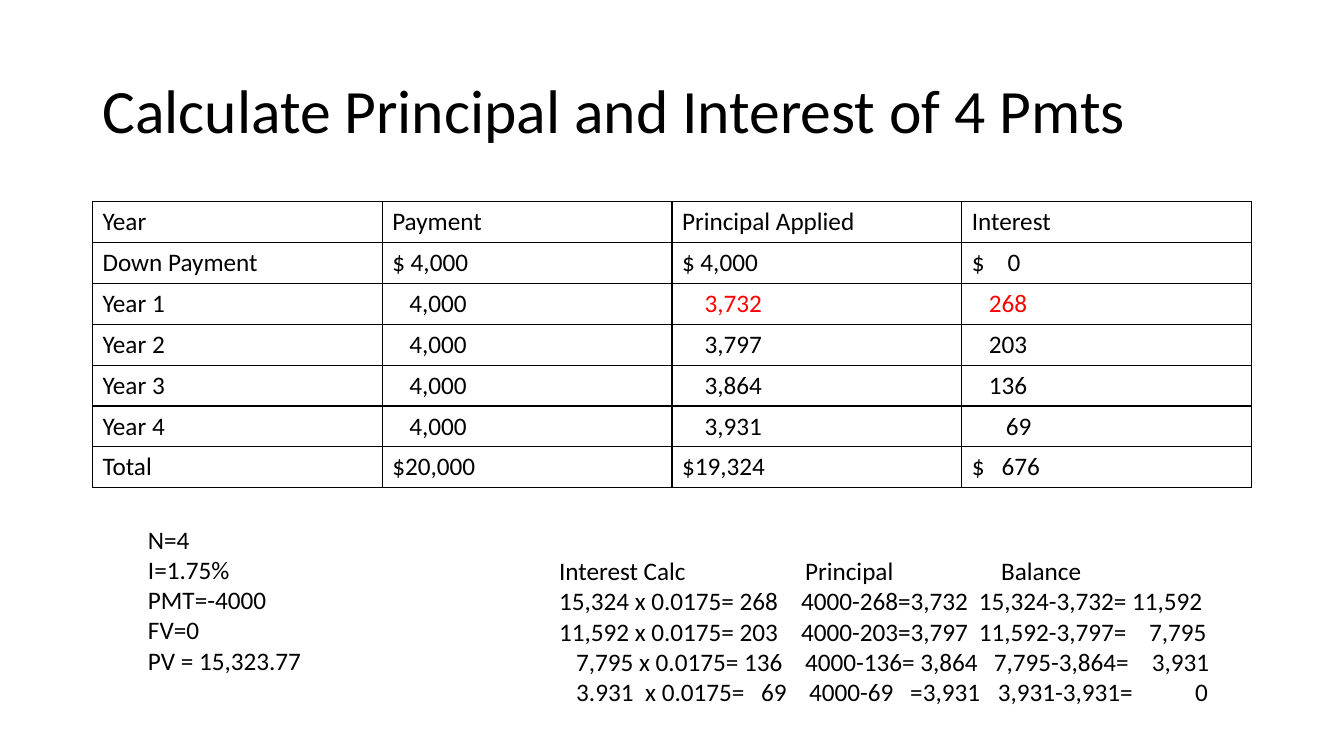
from lxml import etree
from pptx import Presentation
from pptx.dml.color import RGBColor
from pptx.enum.text import MSO_ANCHOR
from pptx.oxml.ns import qn
from pptx.util import Cm, Pt

MIDDLE, TOP = MSO_ANCHOR.MIDDLE, MSO_ANCHOR.TOP
BLACK = RGBColor(0, 0, 0)
RED = RGBColor(255, 0, 0)
FONT = "Calibri"
BODY_SIZE = 18

# Content: a line is a string, or a list of pieces (tab stop in cm or None, text)
TITLE = "Calculate Principal and Interest of 4 Pmts"
HEADER = ["Year", "Payment", "Principal Applied", "Interest"]
DOWN_PAYMENT = ["Down Payment", "$ 4,000", "$ 4,000", [(None, "$"), (0.9, "0")]]
YEARS = [  # year, payment, principal, interest, interest tab stop, number colour
    ("Year 1", "4,000", "3,732", "268", 0.43, RED),
    ("Year 2", "4,000", "3,797", "203", 0.43, BLACK),
    ("Year 3", "4,000", "3,864", "136", 0.43, BLACK),
    ("Year 4", "4,000", "3,931", "69", 0.86, BLACK),
]
TOTAL = ["Total", "$20,000", "$19,324", [(None, "$"), (0.75, "676")]]
LOAN_INPUTS = ["N=4", "I=1.75%", "PMT=-4000", "FV=0", "PV = 15,323.77"]
CALCULATIONS = [
    [(None, "Interest Calc"), (6.2, "Principal"), (11.14, "Balance")],
    [(None, "15,324 x 0.0175= 268"), (6.1, "4000-268=3,732"),
     (10.58, "15,324-3,732= 11,592")],
    [(None, "11,592 x 0.0175= 203"), (6.1, "4000-203=3,797"),
     (10.58, "11,592-3,797="), (14.87, "7,795")],
    [(0.43, "7,795 x 0.0175= 136"), (6.2, "4000-136= 3,864"),
     (10.96, "7,795-3,864="), (14.94, "3,931")],
    [(0.43, "3.931"), (2.17, "x 0.0175="), (5.09, "69"), (6.3, "4000-69"),
     (8.85, "=3,931"), (11.06, "3,931-3,931="), (16.03, "0")],
]

# Geometry in cm
LEFT, CONTENT_WIDTH = 2.33, 29.21
TABLE_TOP, ROW_HEIGHT = 5.08, 1.03
PAYMENT_STOP, PRINCIPAL_STOP = 0.43, 0.57
TEXT_BOXES = [  # left, top, width, height, lines, size, anchor, line spacing
    (LEFT, 1.01, CONTENT_WIDTH, 3.68, [TITLE], 44, MIDDLE, 0.9),
    (3.48, 13.08, 11.15, 4.11, LOAN_INPUTS, BODY_SIZE, TOP, 1.0),
    (13.84, 13.87, 17.1, 4.11, CALCULATIONS, BODY_SIZE, TOP, 1.0),
]


def write_line(paragraph, line, size=BODY_SIZE, color=BLACK):
    """Write the pieces of a line, each at its own tab stop."""
    pieces = [(None, line)] if isinstance(line, str) else line
    stops = [stop for stop, _ in pieces if stop is not None]
    if stops:
        properties = paragraph._p.get_or_add_pPr()
        tab_list = etree.SubElement(properties, qn("a:tabLst"))
        for stop in stops:
            etree.SubElement(tab_list, qn("a:tab"), pos=str(int(Cm(stop))), algn="l")
    run = paragraph.add_run()
    run.text = "".join(text if stop is None else "\t" + text for stop, text in pieces)
    for name, value in {"name": FONT, "size": Pt(size)}.items():
        setattr(run.font, name, value)
    run.font.color.rgb = color


def add_borders(cell):
    properties = cell._tc.get_or_add_tcPr()
    for index, side in enumerate(("lnL", "lnR", "lnT", "lnB")):
        line = etree.Element(qn("a:" + side), w=str(int(Pt(1))))
        fill = etree.SubElement(line, qn("a:solidFill"))
        etree.SubElement(fill, qn("a:srgbClr"), val=str(BLACK))
        properties.insert(index, line)


presentation = Presentation()
presentation.slide_width, presentation.slide_height = Cm(33.87), Cm(19.05)
slide = presentation.slides.add_slide(presentation.slide_layouts[6])

# Title, loan inputs and calculations
for left, top, width, height, lines, size, anchor, spacing in TEXT_BOXES:
    box = slide.shapes.add_textbox(Cm(left), Cm(top), Cm(width), Cm(height))
    frame = box.text_frame
    for name, value in {"word_wrap": True, "vertical_anchor": anchor}.items():
        setattr(frame, name, value)
    for index, line in enumerate(lines):
        paragraph = frame.add_paragraph() if index else frame.paragraphs[0]
        paragraph.line_spacing = spacing
        write_line(paragraph, line, size)

# Payment table
rows = [(HEADER, BLACK), (DOWN_PAYMENT, BLACK)]
for year, payment, principal, interest, stop, color in YEARS:
    rows.append(([year, [(PAYMENT_STOP, payment)], [(PRINCIPAL_STOP, principal)],
                  [(stop, interest)]], color))
rows.append((TOTAL, BLACK))

table = slide.shapes.add_table(
    len(rows), len(HEADER), Cm(LEFT), Cm(TABLE_TOP),
    Cm(CONTENT_WIDTH), Cm(ROW_HEIGHT * len(rows))).table
table.first_row = table.horz_banding = False
for column in table.columns:
    column.width = Cm(CONTENT_WIDTH / len(HEADER))
for row_index, (values, number_color) in enumerate(rows):
    table.rows[row_index].height = Cm(ROW_HEIGHT)
    for column_index, value in enumerate(values):
        cell = table.cell(row_index, column_index)
        cell.fill.background()
        add_borders(cell)
        color = number_color if column_index >= 2 else BLACK
        write_line(cell.text_frame.paragraphs[0], value, color=color)

presentation.save("out.pptx")
